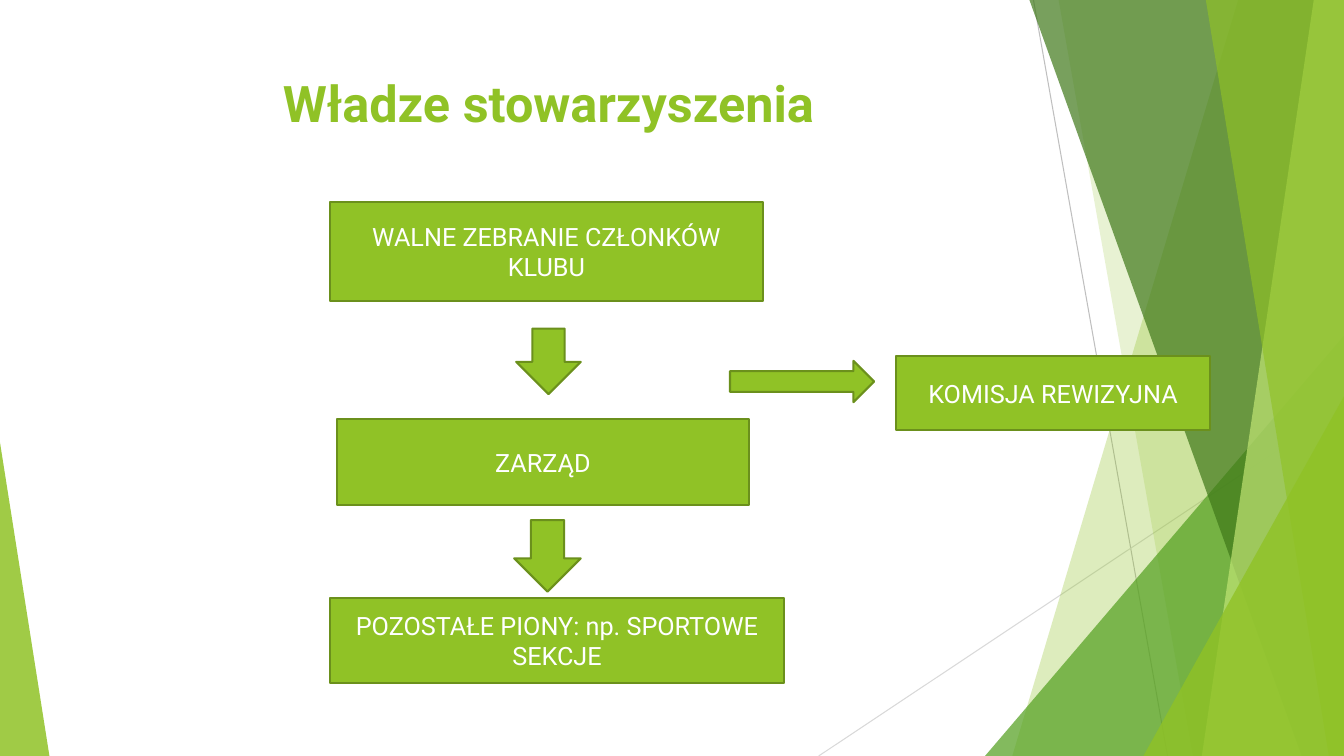
from dataclasses import dataclass

import lxml.etree
import pptx
import pptx.dml.color
import pptx.enum.shapes
import pptx.enum.text
import pptx.oxml.ns
import pptx.util

COLUMNS, ROWS = 13.33, 7.5
PRESET = pptx.enum.shapes.MSO_SHAPE
MIDDLE = pptx.enum.text.MSO_ANCHOR.MIDDLE
TOP = pptx.enum.text.MSO_ANCHOR.TOP


@dataclass(frozen=True)
class Theme:
    font: str = "Roboto"
    lime: str = "90C226"
    pale_lime: str = "C0E474"
    green: str = "54A021"
    forest: str = "3F7819"
    outline: str = "6B901C"
    gray: str = "BFBFBF"
    light_gray: str = "D9D9D9"
    white: str = "FFFFFF"
    title_size: int = 36
    box_size: int = 18
    outline_width: float = 1.5
    ray_width: float = 0.75


THEME = Theme()


def grid(*cells):
    return [pptx.util.Inches(cell) for cell in cells]


def rgb(color):
    return pptx.dml.color.RGBColor.from_string(color)


def fill_solid(shape, color):
    shape.shadow.inherit = False
    shape.fill.solid()
    shape.fill.fore_color.rgb = rgb(color)


def fill_glass(shape, color, opacity):
    fill_solid(shape, color)
    shape.line.fill.background()
    tone = shape.element.spPr.find(".//" + pptx.oxml.ns.qn("a:srgbClr"))
    alpha = lxml.etree.SubElement(tone, pptx.oxml.ns.qn("a:alpha"))
    alpha.set("val", str(opacity * 1000))


def write_text(frame, text, size, color, anchor, bold=False):
    frame.word_wrap = True
    frame.vertical_anchor = anchor
    frame.text = text
    para = frame.paragraphs[0]
    para.alignment = pptx.enum.text.PP_ALIGN.CENTER
    para.font.name = THEME.font
    para.font.size = pptx.util.Pt(size)
    para.font.bold = bold
    para.font.color.rgb = rgb(color)


def add_ray(page, start, end, color):
    ray = page.shapes.add_connector(
        pptx.enum.shapes.MSO_CONNECTOR.STRAIGHT, *grid(*start, *end))
    ray.line.color.rgb = rgb(color)
    ray.line.width = pptx.util.Pt(THEME.ray_width)
    lxml.etree.SubElement(ray.element.spPr, pptx.oxml.ns.qn("a:effectLst"))


def add_ribbon(page, top_left, bottom_left, color, opacity):
    corners = [(top_left, 0), (COLUMNS, 0), (COLUMNS, ROWS), (bottom_left, ROWS)]
    points = [grid(*corner) for corner in corners]
    builder = page.shapes.build_freeform(*points[0])
    builder.add_line_segments(points[1:], close=True)
    fill_glass(builder.convert_to_shape(), color, opacity)


def add_wedge(page, left, top, width, apex, color, opacity):
    wedge = page.shapes.add_shape(
        PRESET.ISOSCELES_TRIANGLE, *grid(left, top, width, ROWS - top))
    wedge.adjustments[0] = apex
    fill_glass(wedge, color, opacity)


def add_block(page, preset, place, text=""):
    block = page.shapes.add_shape(preset, *grid(*place))
    fill_solid(block, THEME.lime)
    block.line.color.rgb = rgb(THEME.outline)
    block.line.width = pptx.util.Pt(THEME.outline_width)
    if text:
        write_text(block.text_frame, text, THEME.box_size, THEME.white, MIDDLE)


def add_backdrop(page):
    add_ray(page, (10.25, 0), (11.58, ROWS), THEME.gray)
    add_ray(page, (COLUMNS, 4.03), (8.12, ROWS), THEME.light_gray)
    add_ribbon(page, 12.28, 10.04, THEME.lime, 30)
    add_ribbon(page, 10.5, 11.83, THEME.lime, 20)
    add_wedge(page, 9.77, 3.33, COLUMNS - 9.77, 1, THEME.green, 72)
    add_ribbon(page, 10.21, 12.91, THEME.forest, 70)
    add_ribbon(page, 13.03, 11.92, THEME.pale_lime, 70)
    add_ribbon(page, 11.96, 13.18, THEME.lime, 65)
    add_wedge(page, 11.34, 3.93, COLUMNS - 11.34, 1, THEME.lime, 80)
    add_wedge(page, 0, 4.39, 0.49, 0, THEME.lime, 85)


def set_title(page, text):
    title = page.shapes.title
    title.left, title.top, title.width, title.height = grid(0.74, 0.67, 9.4, 1.44)
    write_text(title.text_frame, text, THEME.title_size, THEME.lime, TOP, bold=True)
    page.shapes.element.append(title.element)


def main():
    deck = pptx.Presentation()
    deck.slide_width, deck.slide_height = grid(COLUMNS, ROWS)
    page = deck.slides.add_slide(deck.slide_layouts.get_by_name("Title Only"))
    add_backdrop(page)
    set_title(page, "Władze stowarzyszenia")
    add_block(page, PRESET.RECTANGLE, (3.27, 2, 4.3, 0.99),
              "WALNE ZEBRANIE CZŁONKÓW KLUBU")
    add_block(page, PRESET.DOWN_ARROW, (5.12, 3.26, 0.64, 0.65))
    add_block(page, PRESET.RECTANGLE, (3.34, 4.16, 4.09, 0.85), "ZARZĄD")
    add_block(page, PRESET.RIGHT_ARROW, (7.24, 3.58, 1.43, 0.41))
    add_block(page, PRESET.RECTANGLE, (8.89, 3.53, 3.11, 0.74), "KOMISJA REWIZYJNA")
    add_block(page, PRESET.DOWN_ARROW, (5.1, 5.16, 0.66, 0.71))
    add_block(page, PRESET.RECTANGLE, (3.27, 5.93, 4.51, 0.85),
              "POZOSTAŁE PIONY: np. SPORTOWE SEKCJE")
    deck.save("out.pptx")


if __name__ == "__main__":
    main()
